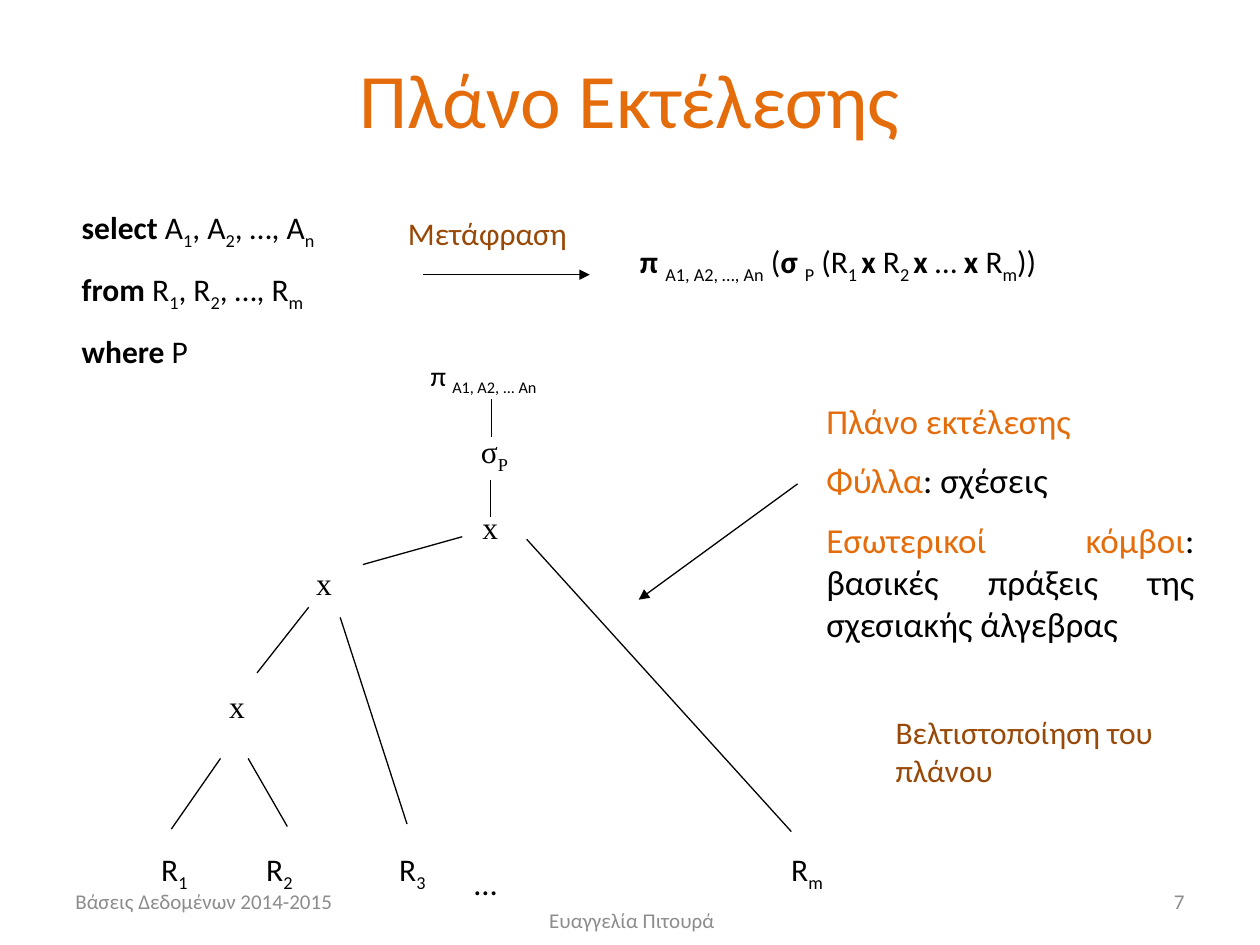
from lxml.etree import SubElement
from pptx import Presentation
from pptx.dml.color import RGBColor
from pptx.enum.shapes import MSO_CONNECTOR as Connector
from pptx.enum.text import MSO_ANCHOR as Anchor, MSO_AUTO_SIZE as AutoSize, PP_ALIGN as Align
from pptx.oxml.ns import qn
from pptx.util import Pt

COLORS = {"ink": "000000", "accent": "E46C0A", "label": "984807", "muted": "8C8C8C"}
SERIF = "Times New Roman"


def apply_format(target, **values):
    for name, value in values.items():
        setattr(target, name, value)


def add_run(paragraph, text, style="", color="ink", size=18, font="Calibri"):
    """Add a run; style holds b for bold and s for subscript."""
    run = paragraph.add_run()
    run.text = text
    apply_format(run.font, name=font, size=Pt(size), bold="b" in style)
    run.font.color.rgb = RGBColor.from_string(COLORS[color])
    if "s" in style:
        run._r.get_or_add_rPr().set("baseline", "-25000")


def add_text(slide, box, lines, align=Align.LEFT, anchor=Anchor.TOP,
             grow=True, gap=11, **run_format):
    """Add a text box whose lines are lists of (text, style, color) runs."""
    frame = slide.shapes.add_textbox(*map(Pt, box)).text_frame
    fit = AutoSize.SHAPE_TO_FIT_TEXT if grow else AutoSize.NONE
    apply_format(frame, word_wrap=True, auto_size=fit, vertical_anchor=anchor)
    for index, runs in enumerate(lines):
        paragraph = frame.add_paragraph() if index else frame.paragraphs[0]
        apply_format(paragraph, alignment=align, space_before=Pt(gap if index else 0))
        for text, *style in runs:
            add_run(paragraph, text, *style, **run_format)
    return frame


def add_line(slide, start, end, arrow=False):
    line = slide.shapes.add_connector(Connector.STRAIGHT, *map(Pt, (*start, *end)))
    line.line.color.rgb = RGBColor.from_string(COLORS["ink"])
    line.line.width = Pt(0.75)
    properties = line._element.spPr
    if arrow:
        SubElement(properties.find(qn("a:ln")), qn("a:tailEnd"), type="triangle")
    SubElement(properties, qn("a:effectLst"))


def add_title(slide, text):
    title = slide.shapes.title
    apply_format(title, left=Pt(36), top=Pt(10.8), width=Pt(648), height=Pt(90))
    title.text_frame.vertical_anchor = Anchor.MIDDLE
    paragraph = title.text_frame.paragraphs[0]
    paragraph.alignment = Align.CENTER
    add_run(paragraph, text, color="accent", size=44)


def add_footer(slide, box, text, align):
    add_text(slide, box, [[(text, "", "muted")]], align, Anchor.MIDDLE, grow=False, size=12)


def add_query(slide):
    """Add the SQL query and its translation to relational algebra."""
    add_text(slide, (39.6, 115.2, 209.5, 93.6), [
        [("select", "b"), (" A",), ("1", "s"), (", A",), ("2", "s"), (", …, A",), ("n", "s")],
        [("from ", "b"), ("R",), ("1", "s"), (", R",), ("2", "s"), (", …, R",), ("m", "s")],
        [("where", "b"), (" P",)],
    ])
    add_text(slide, (358.6, 134.6, 317.5, 28.8), [[
        ("π ", "b"), ("A1, A2, …, An", "s"), (" (",), ("σ ", "b"), ("P", "s"),
        (" (R",), ("1 ", "s"), ("x", "b"), (" R",), ("2 ", "s"), ("x", "b"),
        (" … ",), ("x ", "b"), ("R",), ("m", "s"), ("))",)]])
    add_line(slide, (241.9, 157), (337, 157), arrow=True)
    add_text(slide, (226, 118.8, 173.5, 28.8), [[("Μετάφραση", "", "label")]])


def add_leaves(slide):
    """Add the row of relations, spaced by tab stops."""
    frame = add_text(slide, (85, 468, 481.7, 33), [[
        ("R",), ("1\t", "s"), ("R",), ("2\t", "s"), ("R",), ("3\t", "s"),
        ("…", "s", "ink", 32), ("\tR",), ("m", "s")]])
    stops = SubElement(frame.paragraphs[0]._p.get_or_add_pPr(), qn("a:tabLst"))
    for position in (60, 136, 179, 360):
        SubElement(stops, qn("a:tab"), pos=str(Pt(position)), algn="l")


def add_plan_tree(slide):
    add_text(slide, (239, 201.6, 127.4, 26.6), [[("π ",), ("Α1, Α2, ... An", "s")]], size=16)
    add_text(slide, (267.8, 243.4, 72, 28.8), [[("σ",), ("P", "s")]], font=SERIF)
    for left, top in ((268.6, 286.6), (173.5, 319), (123.8, 388.8)):
        add_text(slide, (left, top, 43.9, 28.8), [[("x",)]], font=SERIF)
    add_leaves(slide)
    branches = [
        ((280.8, 249.8), (280.8, 228.2)),
        ((280.1, 295.2), (280.1, 274.3)),
        ((207.4, 322.6), (264.2, 306.7)),
        ((452.2, 475.2), (301, 308.2)),
        ((146.9, 384.5), (176.4, 347)),
        ((232.6, 470.9), (194.4, 352.8)),
        ((97.9, 473.8), (126, 433.4)),
        ((164.2, 472.3), (141.8, 433.4)),
    ]
    for child, parent in branches:
        add_line(slide, child, parent)


def add_explanation(slide):
    add_line(slide, (455.8, 276.5), (365, 342.7), arrow=True)
    add_text(slide, (465.1, 224.6, 224.6, 152.6), [
        [("Πλάνο εκτέλεσης", "", "accent")],
        [("Φύλλα", "", "accent"), (": σχέσεις",)],
        [("Εσωτερικοί κόμβοι", "", "accent"),
         (": βασικές πράξεις της σχεσιακής άλγεβρας",)],
    ], Align.JUSTIFY, gap=10, size=20)
    add_text(slide, (504.7, 403.9, 165.6, 50.4),
             [[("Βελτιστοποίηση του πλάνου", "", "label")]])


def main():
    deck = Presentation()
    apply_format(deck, slide_width=Pt(720), slide_height=Pt(540))
    slide = deck.slides.add_slide(deck.slide_layouts[5])
    add_title(slide, "Πλάνο Εκτέλεσης")
    add_query(slide)
    add_plan_tree(slide)
    add_explanation(slide)
    add_footer(slide, (36, 500.4, 168, 28.8), "Βάσεις Δεδομένων 2014-2015", Align.LEFT)
    add_footer(slide, (247, 511.2, 228, 28.8), "Ευαγγελία Πιτουρά", Align.CENTER)
    add_footer(slide, (516, 500.4, 168, 28.8), "7", Align.RIGHT)
    deck.save("out.pptx")


if __name__ == "__main__":
    main()
